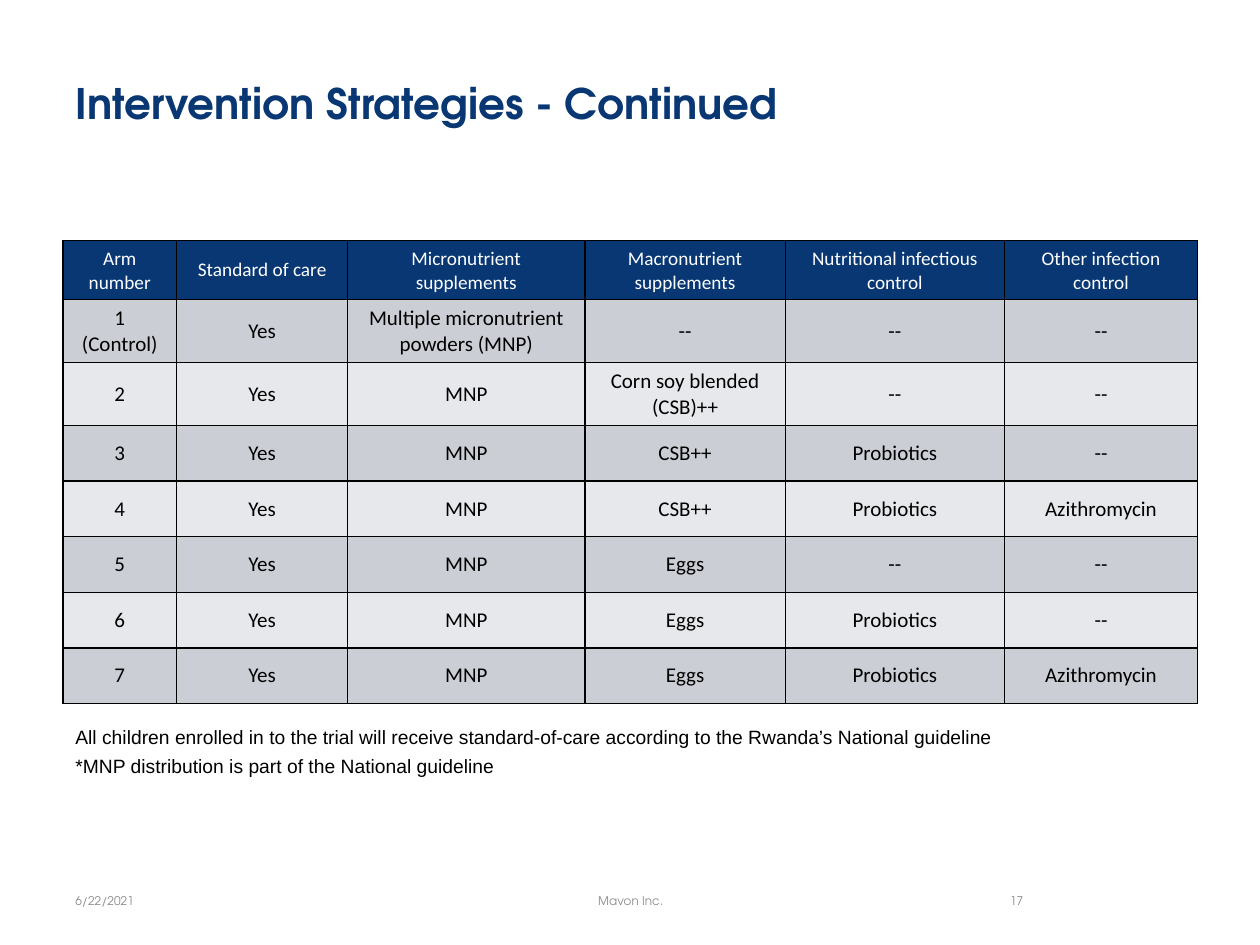
from lxml import etree
from pptx import Presentation
from pptx.dml.color import RGBColor
from pptx.enum.text import MSO_ANCHOR, PP_ALIGN
from pptx.oxml.ns import qn
from pptx.util import Cm, Pt

LEFT, CENTER, RIGHT = PP_ALIGN.LEFT, PP_ALIGN.CENTER, PP_ALIGN.RIGHT
TOP, MIDDLE = MSO_ANCHOR.TOP, MSO_ANCHOR.MIDDLE

BRAND_FONT = "TeX Gyre Adventor"
NAVY, WHITE, BLACK = "083773", "FFFFFF", "000000"
BAND_FILLS = ("CCCED5", "E7E8EB")
MARGIN = 1.27

COLUMN_WIDTHS = (2.29, 3.45, 4.78, 4.04, 4.42, 3.89)
ROW_HEIGHTS = [1.12] + [1.19] * 2 + [1.12] * 5

HEADERS = (
    "Arm number", "Standard of care", "Micronutrient supplements",
    "Macronutrient supplements", "Nutritional infectious control",
    "Other infection control",
)
ARMS = (
    ("1\n(Control)", "Yes", "Multiple micronutrient powders (MNP)", "--", "--", "--"),
    ("2", "Yes", "MNP", "Corn soy blended (CSB)++", "--", "--"),
    ("3", "Yes", "MNP", "CSB++", "Probiotics", "--"),
    ("4", "Yes", "MNP", "CSB++", "Probiotics", "Azithromycin"),
    ("5", "Yes", "MNP", "Eggs", "--", "--"),
    ("6", "Yes", "MNP", "Eggs", "Probiotics", "--"),
    ("7", "Yes", "MNP", "Eggs", "Probiotics", "Azithromycin"),
)
NOTES = (
    "All children enrolled in to the trial will receive standard-of-care "
    "according to the Rwanda’s National guideline\n"
    "*MNP distribution is part of the National guideline"
)
FOOTERS = (
    ("6/22/2021", MARGIN, 5.92, LEFT, "898989"),
    ("Mavon Inc.", 8.69, 8.05, CENTER, "8C8C8C"),
    ("17", 18.21, 2.67, RIGHT, "898989"),
)


def color(value):
    """Return the colour for a hex string."""
    return RGBColor.from_string(value)


def write_text(text_frame, text, *, size, font, text_color, bold=False, align=LEFT, gap=0):
    """Write one paragraph per line of text in a single format."""
    text_frame.text = text
    for index, paragraph in enumerate(text_frame.paragraphs):
        paragraph.alignment = align
        if index and gap:
            paragraph.space_before = Pt(gap)
        for run in paragraph.runs:
            run.font.size = Pt(size)
            run.font.name = font
            run.font.bold = bold
            run.font.color.rgb = color(text_color)


def add_text(slide, text, left, top, width, height, *, anchor=MIDDLE, **text_format):
    """Add a wrapping text box."""
    text_frame = slide.shapes.add_textbox(
        Cm(left), Cm(top), Cm(width), Cm(height)).text_frame
    text_frame.word_wrap = True
    text_frame.vertical_anchor = anchor
    write_text(text_frame, text, **text_format)


def add_borders(cell):
    """Draw a thin black line on every side of a cell."""
    properties = cell._tc.get_or_add_tcPr()
    for index, side in enumerate(("a:lnL", "a:lnR", "a:lnT", "a:lnB")):
        line = etree.Element(qn(side), w=str(Pt(1)))
        line_fill = etree.SubElement(line, qn("a:solidFill"))
        etree.SubElement(line_fill, qn("a:srgbClr"), val=BLACK)
        properties.insert(index, line)


def fill_row(table, row, texts, background, **text_format):
    """Fill one table row with centred text on one background."""
    for column, text in enumerate(texts):
        cell = table.cell(row, column)
        cell.vertical_anchor = MIDDLE
        cell.fill.solid()
        cell.fill.fore_color.rgb = color(background)
        write_text(cell.text_frame, text, font="Calibri", align=CENTER, **text_format)
        add_borders(cell)


def add_arms_table(slide):
    """Add the table of trial arms and their interventions."""
    table = slide.shapes.add_table(
        len(ROW_HEIGHTS), len(COLUMN_WIDTHS), Cm(MARGIN), Cm(4.85),
        Cm(sum(COLUMN_WIDTHS)), Cm(sum(ROW_HEIGHTS))).table
    for column, width in zip(table.columns, COLUMN_WIDTHS):
        column.width = Cm(width)
    for row, height in zip(table.rows, ROW_HEIGHTS):
        row.height = Cm(height)
    fill_row(table, 0, HEADERS, NAVY, size=11, text_color=WHITE)
    for index, arm in enumerate(ARMS):
        fill_row(table, index + 1, arm, BAND_FILLS[index % 2], size=12, text_color=BLACK)


def main():
    """Build the slide and save it."""
    presentation = Presentation()
    presentation.slide_width, presentation.slide_height = Cm(25.4), Cm(19.05)
    slide = presentation.slides.add_slide(presentation.slide_layouts[6])
    add_text(slide, "Intervention Strategies - Continued", MARGIN, 0.76, 22.86, 2.64,
             size=24, font=BRAND_FONT, text_color=NAVY, bold=True)
    for text, left, width, align, text_color in FOOTERS:
        add_text(slide, text, left, 17.65, width, 1.02, size=6.8,
                 font=BRAND_FONT, text_color=text_color, align=align)
    add_arms_table(slide)
    add_text(slide, NOTES, MARGIN, 14.5, 23.42, 1.3, anchor=TOP,
             size=11, font="Arial", text_color=BLACK, gap=3)
    presentation.save("out.pptx")


if __name__ == "__main__":
    main()
